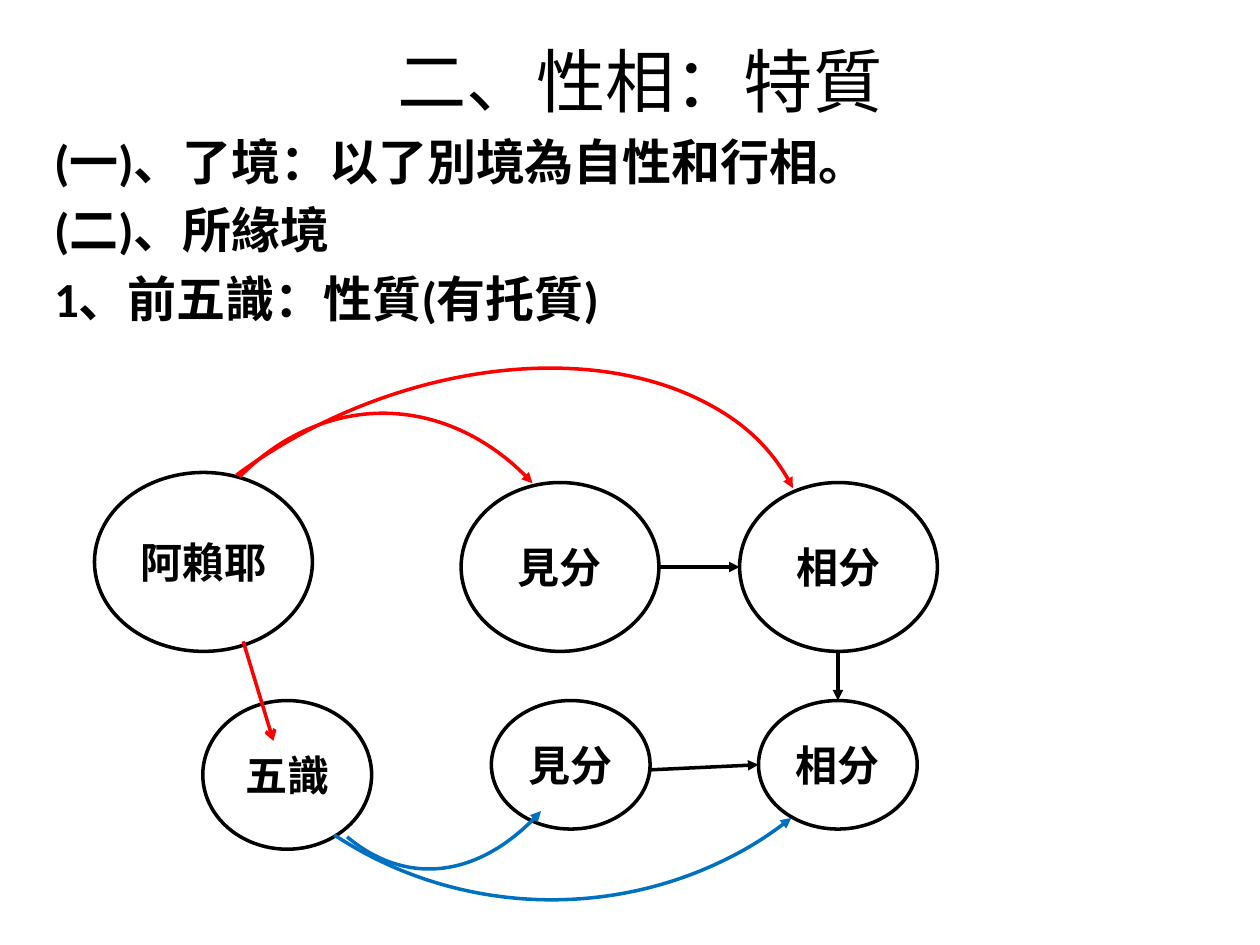
"""Builds a slide on the nature of the five consciousnesses and their objects."""
from dataclasses import dataclass

from lxml.etree import SubElement
from pptx import Presentation
from pptx.dml.color import RGBColor
from pptx.enum.shapes import MSO_CONNECTOR as Connector, MSO_SHAPE as Shape
from pptx.enum.text import MSO_ANCHOR as Anchor, MSO_AUTO_SIZE as AutoSize, PP_ALIGN as Align
from pptx.oxml.ns import qn
from pptx.util import Inches, Pt


@dataclass(frozen=True)
class Theme:
    font: str = "Calibri"
    title_size: float = 39.6
    body_size: float = 28
    node_size: float = 24
    line_width: float = 2
    black: RGBColor = RGBColor(0, 0, 0)
    red: RGBColor = RGBColor(255, 0, 0)
    blue: RGBColor = RGBColor(0, 112, 192)


theme = Theme()


def style_text(para, size, bold):
    for span in para.runs:
        span.font.name = theme.font
        span.font.size = Pt(size)
        span.font.bold = bold
        span.font.color.rgb = theme.black


def style_line(shape, color, end=None, arrow="triangle"):
    shape.line.color.rgb = color
    shape.line.width = Pt(theme.line_width)
    if end:
        outline = shape.element.spPr.find(qn("a:ln"))
        SubElement(outline, qn(f"a:{end}"), type=arrow)


deck = Presentation()
deck.slide_width, deck.slide_height = Inches(10), Inches(7.5)
page = deck.slides.add_slide(deck.slide_layouts[1])

title, body = page.placeholders
title.left, title.top, title.width, title.height = map(Inches, (0.33, 0.36, 9.5, 0.55))
title.text_frame.text = "二、性相：特質"
title.text_frame.auto_size = AutoSize.NONE
title.text_frame.vertical_anchor = Anchor.MIDDLE
title.text_frame.paragraphs[0].alignment = Align.CENTER
style_text(title.text_frame.paragraphs[0], theme.title_size, False)

body.left, body.top, body.width, body.height = map(Inches, (0.33, 0.99, 9.31, 6.06))
body.text_frame.text = "\n".join([
    "(一)、了境：以了別境為自性和行相。",
    "(二)、所緣境",
    "1、前五識：性質(有托質)",
])
body.text_frame.auto_size = AutoSize.NONE
for para in body.text_frame.paragraphs:
    SubElement(para._p.get_or_add_pPr(), qn("a:buNone"))
    style_text(para, theme.body_size, True)

nodes = [
    ("阿賴耶", 0.75, 3.75, 1.73, 1.42),
    ("見分", 3.66, 3.83, 1.57, 1.34),
    ("相分", 5.87, 3.83, 1.57, 1.34),
    ("五識", 1.61, 5.56, 1.34, 1.18),
    ("見分", 3.9, 5.56, 1.26, 1.02),
    ("相分", 6.02, 5.56, 1.26, 1.02),
]
for label, *place in nodes:
    node = page.shapes.add_shape(Shape.OVAL, *map(Inches, place))
    node.shadow.inherit = False
    node.fill.background()
    style_line(node, theme.black)
    node.text_frame.text = label
    node.text_frame.vertical_anchor = Anchor.MIDDLE
    node.text_frame.paragraphs[0].alignment = Align.CENTER
    style_text(node.text_frame.paragraphs[0], theme.node_size, True)

arcs = [
    ((0.51, 3.11, 6.07, 4.1), 336.3, (146.105, 215.177), theme.red, "tailEnd"),
    ((1.22, 3.28, 3.64, 4.6), 0, (142.535, 182.54), theme.red, "tailEnd"),
    ((1.38, 1.56, 5.95, 5.58), 183.5, (134.721, 181.977), theme.blue, "headEnd"),
    ((1.94, 1.32, 3.16, 5.58), 183.5, (148.862, 170), theme.blue, "headEnd"),
]
for place, rotation, angles, color, end in arcs:
    arc = page.shapes.add_shape(Shape.ARC, *map(Inches, place))
    arc.shadow.inherit = False
    arc.fill.background()
    arc.rotation = rotation
    arc.adjustments[0], arc.adjustments[1] = angles
    style_line(arc, color, end)

arrows = [
    ((5.24, 4.5, 5.87, 4.5), theme.black, "triangle"),
    ((6.65, 5.17, 6.65, 5.56), theme.black, "triangle"),
    ((5.16, 6.11, 6.02, 6.07), theme.black, "triangle"),
    ((1.93, 5.09, 2.17, 5.88), theme.red, "arrow"),
]
for ends, color, head in arrows:
    arrow = page.shapes.add_connector(Connector.STRAIGHT, *map(Inches, ends))
    style_line(arrow, color, "tailEnd", head)
    SubElement(arrow.element.spPr, qn("a:effectLst"))

deck.save("out.pptx")
